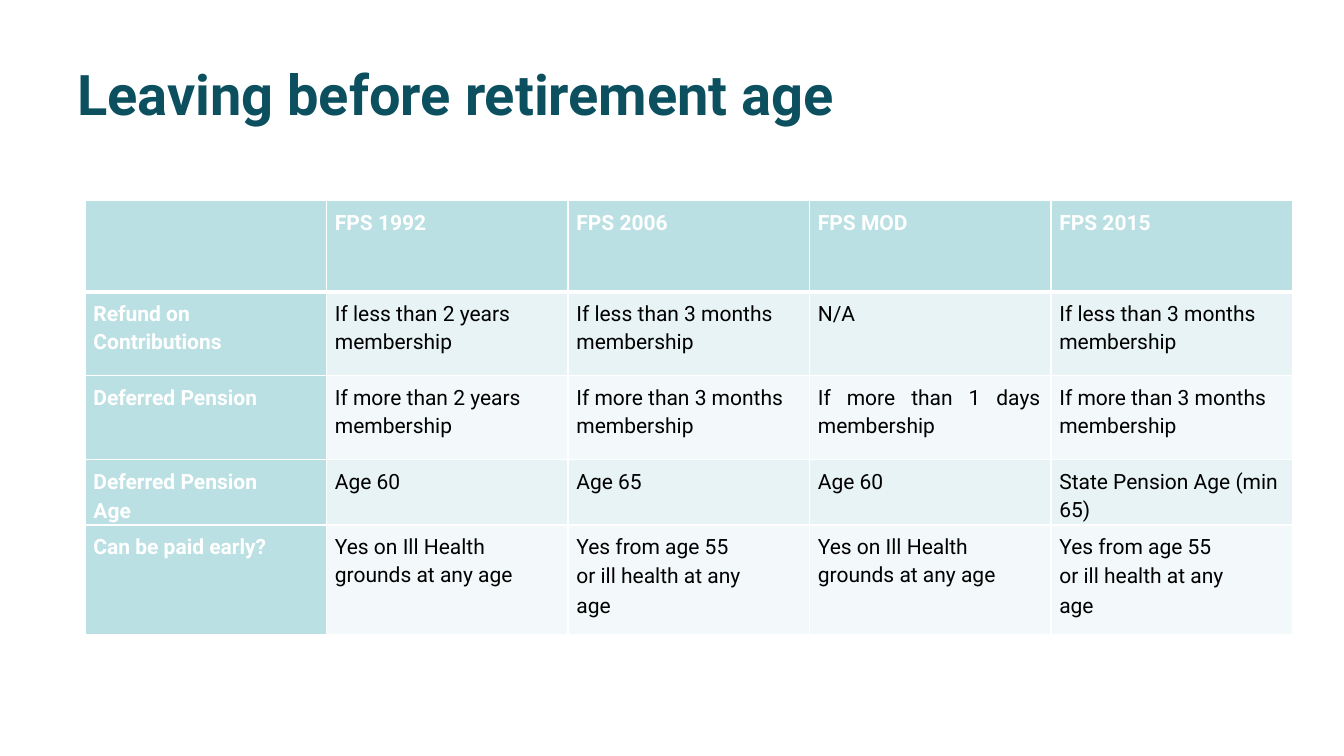
from lxml import etree
from pptx import Presentation
from pptx import util as u
from pptx.dml.color import RGBColor
from pptx.enum import text
from pptx.oxml import ns

PX = 9525
FONT = "Roboto"
TEAL = RGBColor(0x0C, 0x50, 0x60)
WHITE = RGBColor(0xFF, 0xFF, 0xFF)
BLACK = RGBColor(0, 0, 0)
HEADING_FILL = RGBColor(0xBB, 0xE0, 0xE3)
BAND_FILLS = (RGBColor(0xF3, 0xF9, 0xFA), RGBColor(0xE7, 0xF3, 0xF4))

COLUMN_WIDTH = 230
ROW_HEIGHTS = (87, 80, 80, 61, 104)
EARLY_FROM_55 = "Yes from age 55\nor ill health at any\nage"
EARLY_ILL_HEALTH = "Yes on Ill Health grounds at any age"
ROWS = (
    ("", "FPS 1992", "FPS 2006", "FPS MOD", "FPS 2015"),
    ("Refund on Contributions", "If less than 2 years membership",
     "If less than 3 months membership", "N/A",
     "If less than 3 months membership"),
    ("Deferred Pension", "If more than 2 years membership",
     "If more than 3 months membership", "If more than 1 days membership",
     "If more than 3 months membership"),
    ("Deferred Pension\nAge", "Age 60", "Age 65", "Age 60",
     "State Pension Age (min 65)"),
    ("Can be paid early?", EARLY_ILL_HEALTH, EARLY_FROM_55,
     EARLY_ILL_HEALTH, EARLY_FROM_55),
)
JUSTIFIED_CELL = (2, 3)


def px(count):
    return u.Emu(count * PX)


def add_span(para, words, size, color, bold):
    span = para.add_run()
    span.text = words
    span.font.name = FONT
    span.font.size = u.Pt(size)
    span.font.bold = bold
    span.font.color.rgb = color


def add_title(page, words):
    box = page.shapes.add_textbox(px(64), px(29), px(1152), px(120))
    frame = box.text_frame
    frame.word_wrap = True
    frame.vertical_anchor = text.MSO_ANCHOR.MIDDLE
    add_span(frame.paragraphs[0], words, 40, TEAL, True)


def set_borders(cell, top, bottom):
    """Draw white cell edges; top and bottom are widths in points."""
    properties = cell._tc.get_or_add_tcPr()
    for edge, width in (("L", 1), ("R", 1), ("T", top), ("B", bottom)):
        line = etree.SubElement(properties, ns.qn(f"a:ln{edge}"), w=str(u.Pt(width)))
        fill = etree.SubElement(line, ns.qn("a:solidFill"))
        etree.SubElement(fill, ns.qn("a:srgbClr"), val=str(WHITE))


def fill_cell(cell, words, color, bold, alignment):
    cell.margin_left, cell.margin_top = px(8), px(6)
    cell.margin_right, cell.margin_bottom = px(10), px(0)
    frame = cell.text_frame
    lines = words.split("\n") if words else []
    for index, line in enumerate(lines):
        para = frame.add_paragraph() if index else frame.paragraphs[0]
        para.line_spacing = 1.15
        para.alignment = alignment
        if index < len(lines) - 1:
            para.space_after = u.Pt(0.7)
        add_span(para, line, 15, color, bold)


def add_pension_table(page):
    columns = len(ROWS[0])
    frame = page.shapes.add_table(len(ROWS), columns, px(81), px(191),
                                  px(COLUMN_WIDTH * columns), px(sum(ROW_HEIGHTS)))
    table = frame.table
    table.first_col = True
    for column in table.columns:
        column.width = px(COLUMN_WIDTH)
    for r, (row, height) in enumerate(zip(ROWS, ROW_HEIGHTS)):
        table.rows[r].height = px(height)
        for c, words in enumerate(row):
            cell = table.cell(r, c)
            heading = r == 0 or c == 0
            justified = (r, c) == JUSTIFIED_CELL
            set_borders(cell, top=3 if r == 1 else 1, bottom=3 if r == 0 else 1)
            cell.fill.solid()
            cell.fill.fore_color.rgb = HEADING_FILL if heading else BAND_FILLS[r % 2]
            fill_cell(cell, words, WHITE if heading else BLACK, heading,
                      text.PP_ALIGN.JUSTIFY if justified else text.PP_ALIGN.LEFT)


def main():
    deck = Presentation()
    deck.slide_width, deck.slide_height = px(1280), px(720)
    page = deck.slides.add_slide(deck.slide_layouts[6])
    add_title(page, "Leaving before retirement age")
    add_pension_table(page)
    deck.save("out.pptx")


if __name__ == "__main__":
    main()
